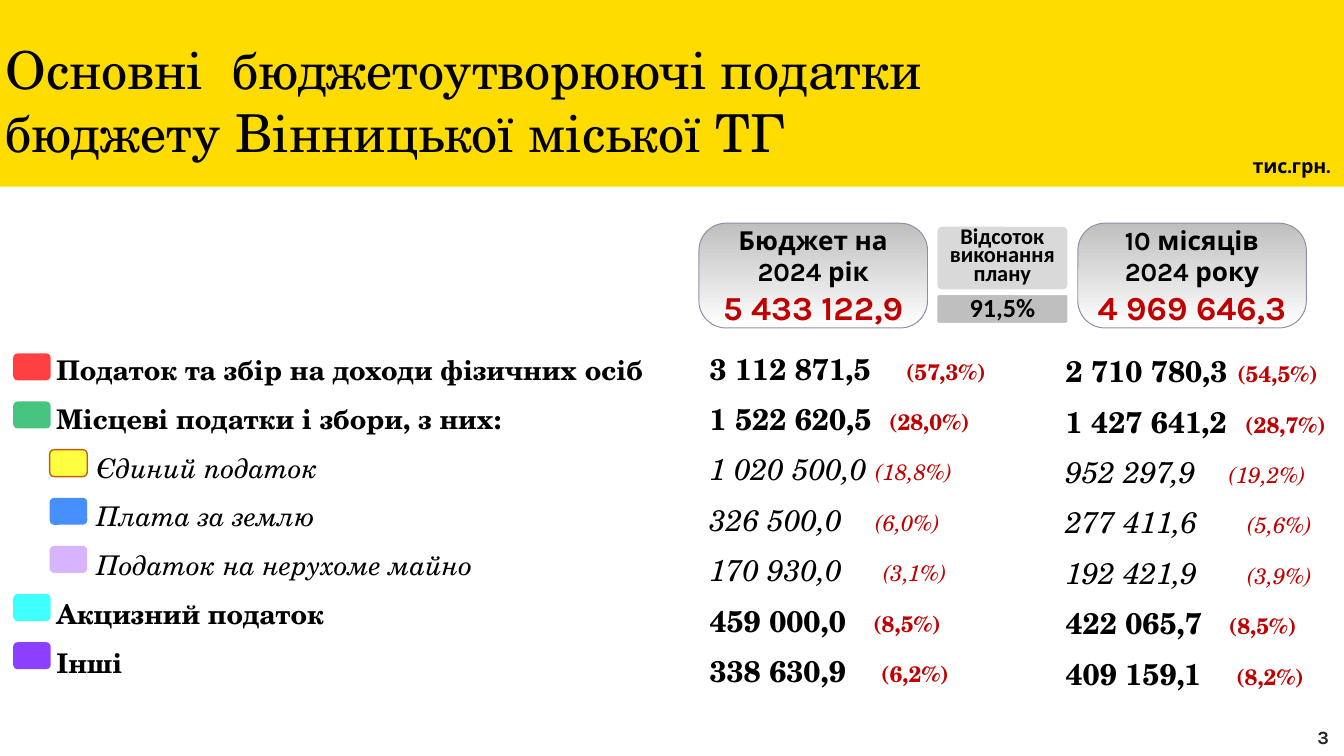
from lxml import etree
from pptx import Presentation, util as u
from pptx.dml.color import RGBColor
from pptx.enum import shapes, text
from pptx.oxml.ns import qn

COLORS = {
    "band": "FEDC00", "ink": "000000", "accent": "C00000", "page": "262626",
    "card_top": "BFBFBF", "card_bottom": "FFFFFF", "card_edge": "9689A6",
    "label": "D9D9D9", "percent": "BFBFBF", "white": "FFFFFF", "swatch_edge": "C55A11",
}
SERIF, SANS, NARROW = "TeX Gyre Schola", "Karla", "Calibri"

TITLE = ["Основні  бюджетоутворюючі податки", "бюджету Вінницької міської ТГ"]
TAXES = [
    ("Податок та збір на доходи фізичних осіб", "FF0000", False),
    ("Місцеві податки і збори, з них:", "0AB156", False),
    ("Єдиний податок", "FFFF00", True),
    ("Плата за землю", "0A6AFD", True),
    ("Податок на нерухоме майно", "CC9CFE", True),
    ("Акцизний податок", "00FFFF", False),
    ("Інші", "6600FF", False),
]
PLAN = [
    ("3 112 871,5", "(57,3%)", 3.71), ("1 522 620,5", "(28,0%)", 3.39),
    ("1 020 500,0", "(18,8%)", 3.13), ("326 500,0", "(6,0%)", 3.13),
    ("170 930,0", "(3,1%)", 3.28), ("459 000,0", "(8,5%)", 3.09),
    ("338 630,9", "(6,2%)", 3.24),
]
ACTUAL = [
    ("2 710 780,3", "(54,5%)", 3.24), ("1 427 641,2", "(28,7%)", 3.39),
    ("952 297,9", "(19,2%)", 3.08), ("277 411,6", "(5,6%)", 3.43),
    ("192 421,9", "(3,9%)", 3.43), ("422 065,7", "(8,5%)", 3.08),
    ("409 159,1", "(8,2%)", 3.22),
]
COLUMNS = [(PLAN, 13.16, 6.22, 7.44), (ACTUAL, 19.89, 6.27, 6.22)]
CARDS = [
    (13.21, ["Бюджет на", "2024 рік"], "5 433 122,9"),
    (20.37, ["10 місяців", "2024 року"], "4 969 646,3"),
]
BADGES = [
    (4.27, 1.22, "label", ["Відсоток виконання", "плану"], 12, u.Pt(10)),
    (5.56, 0.56, "percent", ["91,5%"], 14, 0.9),
]
SWATCH_TOP, SWATCH_STEP = 6.68, 0.91


def rgb(value):
    return RGBColor.from_string(value)


def place(item, left, top, width, height):
    item.left, item.top = u.Cm(left), u.Cm(top)
    item.width, item.height = u.Cm(width), u.Cm(height)


def add_run(paragraph, words, size, font, color="ink", bold=False, italic=False):
    run = paragraph.add_run()
    run.text = words
    run.font.size, run.font.name = u.Pt(size), font
    run.font.bold, run.font.italic = bold, italic
    run.font.color.rgb = rgb(COLORS[color])


def paragraphs(frame, count):
    return [frame.paragraphs[0]] + [frame.add_paragraph() for _ in range(count - 1)]


def add_block(slide, kind, box, fill=None, edge=None, width=1):
    block = slide.shapes.add_shape(kind, *(u.Cm(v) for v in box))
    block.shadow.inherit = False
    if fill:
        block.fill.solid()
        block.fill.fore_color.rgb = rgb(fill)
    if edge:
        block.line.color.rgb = rgb(edge)
        block.line.width = u.Pt(width)
    else:
        block.line.fill.background()
    return block


def add_note(slide, box, words, size, align):
    frame = slide.shapes.add_textbox(*(u.Cm(v) for v in box)).text_frame
    frame.word_wrap = False
    frame.paragraphs[0].alignment = align
    add_run(frame.paragraphs[0], words, size, SANS,
            "page" if words.isdigit() else "ink", bold=True)


def add_heading(slide):
    band = add_block(slide, shapes.MSO_SHAPE.RECTANGLE, (0, 0, 25.4, 3.53), COLORS["band"])
    slide.shapes._spTree.insert(2, band._element)
    title = slide.shapes.title
    place(title, -0.15, 0.58, 25.7, 2.64)
    frame = title.text_frame
    frame.vertical_anchor = text.MSO_ANCHOR.TOP
    frame.auto_size = text.MSO_AUTO_SIZE.NONE
    for paragraph, words in zip(paragraphs(frame, len(TITLE)), TITLE):
        paragraph.alignment = text.PP_ALIGN.LEFT
        add_run(paragraph, words, 28, SERIF)
    add_note(slide, (23.34, 2.79, 2.06, 0.74), "тис.грн.", 10.5, text.PP_ALIGN.RIGHT)


def add_taxes(slide):
    body = slide.placeholders[1]
    place(body, 0.81, 6.25, 12.83, 6.76)
    frame = body.text_frame
    frame.auto_size = text.MSO_AUTO_SIZE.NONE
    for i, (paragraph, (name, color, sub)) in enumerate(
            zip(paragraphs(frame, len(TAXES)), TAXES)):
        paragraph.line_spacing, paragraph.space_before = 1.5, u.Pt(0)
        props = paragraph._p.get_or_add_pPr()
        props.set("marL", "0")
        props.set("indent", str(u.Cm(0.76 if sub else 0)))
        etree.SubElement(props, qn("a:buNone"))
        add_run(paragraph, name, 14.5, SERIF, bold=not sub, italic=sub)

        box = (0.94 if sub else 0.25, SWATCH_TOP + i * SWATCH_STEP, 0.71, 0.51)
        edge = COLORS["swatch_edge"] if color == "FFFF00" else None
        swatch = add_block(slide, shapes.MSO_SHAPE.ROUNDED_RECTANGLE, box, color, edge, 0.75)
        tint = swatch._element.spPr.find(qn("a:solidFill"))[0]
        etree.SubElement(tint, qn("a:alpha"), val="75000")


def add_amounts(slide, amounts, left, top, width):
    frame = slide.shapes.add_textbox(u.Cm(left), u.Cm(top), u.Cm(width), u.Cm(6.99)).text_frame
    frame.word_wrap = True
    rows = zip(paragraphs(frame, len(amounts)), amounts, TAXES)
    for paragraph, (amount, share, stop), (_, _, sub) in rows:
        paragraph.line_spacing = u.Pt(27)
        tabs = etree.SubElement(paragraph._p.get_or_add_pPr(), qn("a:tabLst"))
        etree.SubElement(tabs, qn("a:tab"), pos=str(u.Cm(stop)), algn="l")
        add_run(paragraph, amount + "\t", 16, SERIF, bold=not sub, italic=sub)
        add_run(paragraph, share, 12, SERIF, "accent", not sub, sub)


def add_card(slide, left, period, total):
    card = add_block(slide, shapes.MSO_SHAPE.ROUNDED_RECTANGLE, (left, 4.22, 4.32, 1.98),
                     edge=COLORS["card_edge"], width=0.5)
    card.adjustments[0] = 0.26
    card.fill.gradient()
    card.fill.gradient_angle = 270
    for stop, name in zip(card.fill.gradient_stops, ("card_top", "card_bottom")):
        stop.color.rgb = rgb(COLORS[name])
    frame = card.text_frame
    frame.word_wrap = False
    frame.vertical_anchor = text.MSO_ANCHOR.MIDDLE
    lines = [(words, 14, "ink") for words in period] + [(total, 18, "accent")]
    for paragraph, (words, size, color) in zip(paragraphs(frame, len(lines)), lines):
        paragraph.alignment = text.PP_ALIGN.CENTER
        add_run(paragraph, words, size, SANS, color, bold=True)


def add_badge(slide, top, height, fill, lines, size, spacing):
    badge = add_block(slide, shapes.MSO_SHAPE.ROUNDED_RECTANGLE, (17.7, top, 2.49, height),
                      COLORS[fill], COLORS["white"])
    badge.adjustments[0] = 0.08
    frame = badge.text_frame
    frame.word_wrap = True
    frame.vertical_anchor = text.MSO_ANCHOR.MIDDLE
    frame.margin_left = frame.margin_right = u.Cm(0.2)
    frame.margin_top = frame.margin_bottom = u.Cm(0.2)
    for paragraph, words in zip(paragraphs(frame, len(lines)), lines):
        paragraph.alignment = text.PP_ALIGN.CENTER
        paragraph.line_spacing = spacing
        add_run(paragraph, words, size, NARROW, bold=True)


def main():
    deck = Presentation()
    deck.slide_width, deck.slide_height = u.Cm(25.4), u.Cm(14.29)
    slide = deck.slides.add_slide(deck.slide_layouts[1])
    add_heading(slide)
    add_taxes(slide)
    for column in COLUMNS:
        add_amounts(slide, *column)
    for card in CARDS:
        add_card(slide, *card)
    for badge in BADGES:
        add_badge(slide, *badge)
    add_note(slide, (24.46, 13.59, 1.09, 0.69), "3", 10, text.PP_ALIGN.CENTER)
    deck.save("out.pptx")


if __name__ == "__main__":
    main()
